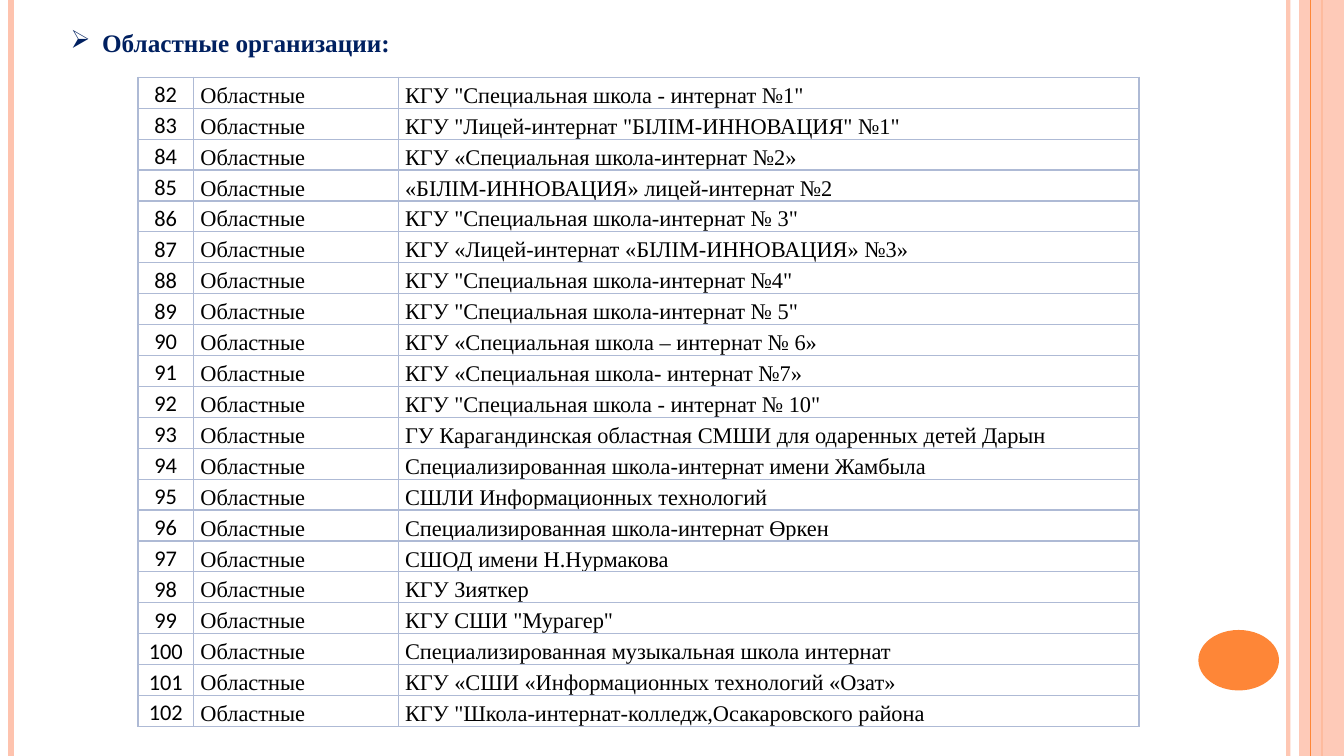
from lxml.etree import SubElement as Sub
from pptx import Presentation
from pptx.dml.color import RGBColor
from pptx.enum.shapes import MSO_CONNECTOR as Conn, MSO_SHAPE as Shape
from pptx.enum.text import MSO_ANCHOR as Anchor, MSO_AUTO_SIZE as Auto, PP_ALIGN as Align
from pptx.oxml import parse_xml
from pptx.oxml.ns import nsdecls, qn
from pptx.util import Pt

WIDE, HIGH = 960, 540
SERIF = "Times New Roman"
PEACH, ORANGE = "FEC3AE", "FE8637"
FIRST = 82
GROUP = "Областные"
SCHOOLS = [
    'КГУ "Специальная школа - интернат №1"',
    'КГУ "Лицей-интернат "БІЛІМ-ИННОВАЦИЯ" №1"',
    "КГУ «Специальная школа-интернат №2»",
    "«БІЛІМ-ИННОВАЦИЯ» лицей-интернат №2",
    'КГУ "Специальная школа-интернат № 3"',
    "КГУ «Лицей-интернат «БІЛІМ-ИННОВАЦИЯ» №3»",
    'КГУ "Специальная школа-интернат №4"',
    'КГУ "Специальная школа-интернат № 5"',
    "КГУ «Специальная школа – интернат № 6»",
    "КГУ «Специальная школа- интернат №7»",
    'КГУ "Специальная школа - интернат № 10"',
    "ГУ Карагандинская областная СМШИ для одаренных детей Дарын",
    "Специализированная школа-интернат имени Жамбыла",
    "СШЛИ Информационных технологий",
    "Специализированная школа-интернат Өркен",
    "СШОД имени Н.Нурмакова",
    "КГУ Зияткер",
    'КГУ СШИ "Мурагер"',
    "Специализированная музыкальная школа интернат",
    "КГУ «СШИ «Информационных технологий «Озат»",
    'КГУ "Школа-интернат-колледж,Осакаровского района',
]


def paint(color, value):
    """Set a colour from a hex string."""
    color.rgb = RGBColor.from_string(value)


def fade(part, share):
    """Make the solid fill under an element partly transparent."""
    tint = next(part.iter(qn("a:srgbClr")))
    Sub(tint, qn("a:alpha"), val=str(share * 1000))


def style(font, face, size, value, bold=False):
    """Set the face, size, colour and weight of a font."""
    font.name, font.size, font.bold = face, Pt(size), bold
    paint(font.color, value)


def add_rule(slide, x, value, width):
    """Draw a full-height vertical line."""
    rule = slide.shapes.add_connector(Conn.STRAIGHT, Pt(x), 0, Pt(x), Pt(HIGH))
    paint(rule.line.color, value)
    rule.line.width = Pt(width)
    Sub(rule._element.spPr, qn("a:effectLst"))
    return rule


def add_block(slide, kind, box, value):
    """Draw a plain filled shape in the given box."""
    block = slide.shapes.add_shape(kind, *map(Pt, box))
    block.shadow.inherit = False
    block.fill.solid()
    paint(block.fill.fore_color, value)
    block.line.fill.background()
    return block


def add_frame(slide):
    """Draw the lines, band and disc at the slide's edges."""
    fade(add_rule(slide, WIDE - 39.8, PEACH, 3)._element, 93)
    add_rule(slide, 7.9, PEACH, 4.5)
    add_rule(slide, WIDE - 16, ORANGE, 1.5)
    band = add_block(slide, Shape.RECTANGLE, (WIDE - 32, 0, 32, HIGH), PEACH)
    fade(band._element, 87)
    add_rule(slide, WIDE - 24, ORANGE, 0.75)
    add_block(slide, Shape.OVAL, (856, 450, 57.6, 43.2), ORANGE)


def add_title(slide, box):
    """Place the bulleted heading in the title placeholder."""
    title = slide.shapes.title
    title.left, title.top, title.width, title.height = map(Pt, box)
    frame = title.text_frame
    frame.text = "Областные организации:"
    frame.word_wrap = False
    frame.auto_size = Auto.SHAPE_TO_FIT_TEXT
    frame.vertical_anchor = Anchor.TOP
    para = frame.paragraphs[0]
    para.alignment = Align.LEFT
    props = para._p.get_or_add_pPr()
    props.set("marL", str(Pt(22.5)))
    props.set("indent", str(-Pt(22.5)))
    Sub(props, qn("a:buChar"), char="➢")
    style(para.runs[0].font, SERIF, 18, "002060", True)


def add_edges(cell, value):
    """Draw a one-point border on every side of a cell."""
    props = cell._tc.get_or_add_tcPr()
    for i, side in enumerate("LRTB"):
        props.insert(i, parse_xml(
            f'<a:ln{side} {nsdecls("a")} w="{Pt(1)}"><a:solidFill>'
            f'<a:srgbClr val="{value}"/></a:solidFill></a:ln{side}>'))


def fill_cell(cell, text, face, align):
    """Write and format one table cell."""
    cell.fill.background()
    add_edges(cell, "AEBAD5")
    cell.margin_left = cell.margin_right = Pt(5)
    cell.margin_top = cell.margin_bottom = 0
    cell.vertical_anchor = Anchor.BOTTOM
    para = cell.text_frame.paragraphs[0]
    para.text = text
    para.alignment = align
    para.line_spacing = 1.15
    style(para.runs[0].font, face, 16, "000000")


def add_list(slide, box):
    """Build the numbered table of schools in the given box."""
    count = len(SCHOOLS)
    table = slide.shapes.add_table(count, 3, *map(Pt, box)).table
    table.first_row = table.horz_banding = False
    left, mid = 39.6, 146.2
    for col, width in zip(table.columns, (left, mid, box[2] - left - mid)):
        col.width = Pt(width)
    for i, school in enumerate(SCHOOLS):
        table.rows[i].height = Pt(box[3] / count)
        fill_cell(table.cell(i, 0), str(FIRST + i), "Calibri", Align.CENTER)
        fill_cell(table.cell(i, 1), GROUP, SERIF, Align.LEFT)
        fill_cell(table.cell(i, 2), school, SERIF, Align.LEFT)


def main():
    """Build and save the slide."""
    deck = Presentation()
    deck.slide_width, deck.slide_height = Pt(WIDE), Pt(HIGH)
    slide = deck.slides.add_slide(deck.slide_layouts[5])
    add_frame(slide)
    add_list(slide, (98.6, 55.2, 715, 463.7))
    add_title(slide, (43.2, 16, 245, 29))
    deck.save("out.pptx")


if __name__ == "__main__":
    main()
